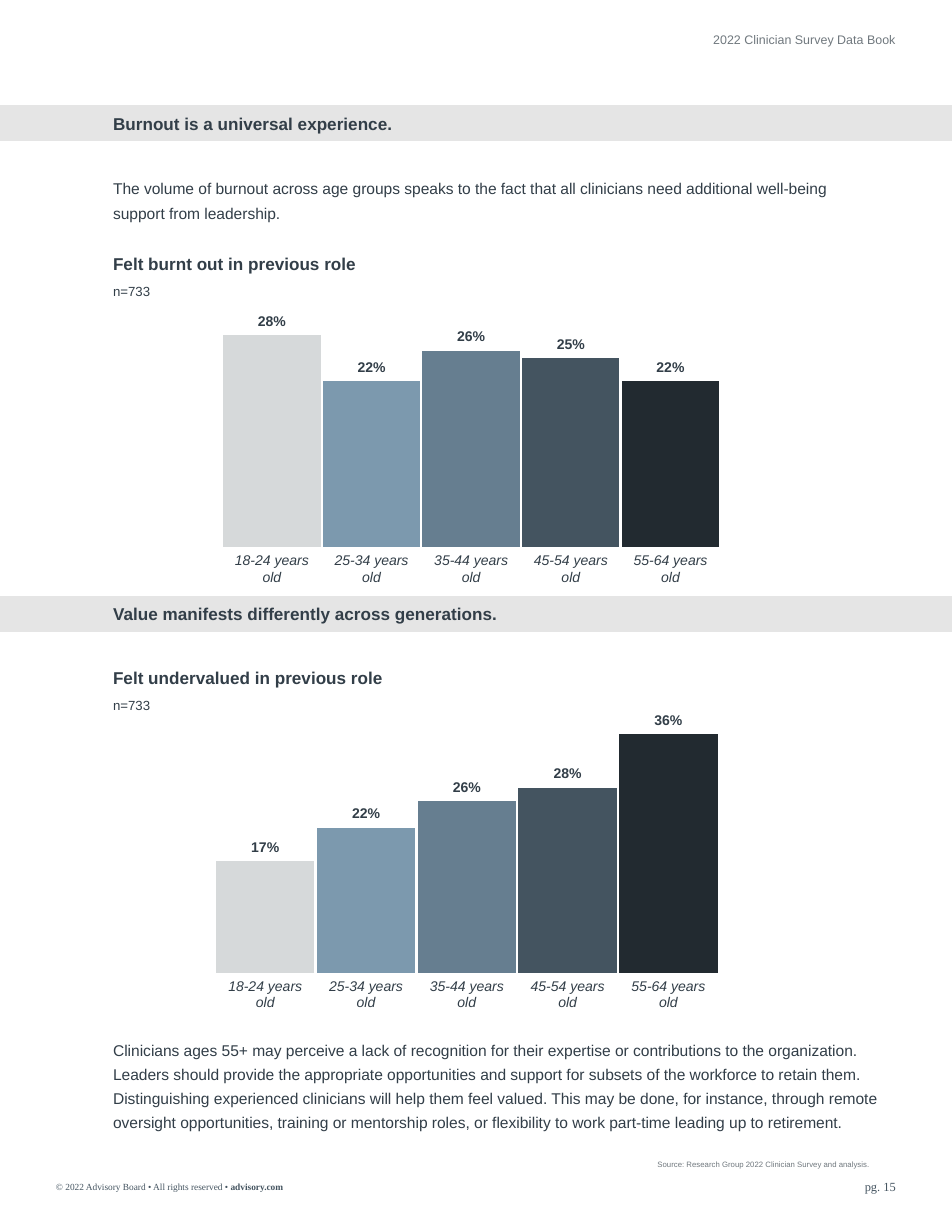
"""Build the clinician survey page on burnout and value by age group."""
import pptx
import pptx.chart.data
import pptx.dml.color
import pptx.enum.chart
import pptx.enum.shapes
import pptx.enum.text
import pptx.oxml
import pptx.oxml.ns
import pptx.util

Inches = pptx.util.Inches
ALIGN = pptx.enum.text.PP_ALIGN
ANCHOR = pptx.enum.text.MSO_ANCHOR

THEME = {
    "sans": "Arial", "serif": "Times New Roman",
    "ink": "323E48", "muted": "70787E", "footer": "445460",
    "band": "E5E5E5", "white": "FFFFFF",
    "bars": ["D6D9DA", "7C99AE", "667E90", "445460", "222A30"],
    "heading": 11, "body": 10, "label": 9, "sample": 8.5, "small": 8, "legal": 6, "source": 5,
}
MARGIN = 1.01
AGES = ["18-24 years old", "25-34 years old", "35-44 years old", "45-54 years old", "55-64 years old"]
PLOT = {"x": 0.282, "y": 0.225, "w": 0.58, "h": 0.602}

PAGE_NUMBER = "pg. 15"
COPYRIGHT = [("© 2022 Advisory Board • All rights reserved • ", False), ("advisory.com", True)]
SOURCE = "Source: Research Group 2022 Clinician Survey and analysis."
HEADER = "2022 Clinician Survey Data Book"
INTRO = ("The volume of burnout across age groups speaks to the fact that all clinicians need "
         "additional well-being\nsupport from leadership.")
CLOSING = ("Clinicians ages 55+ may perceive a lack of recognition for their expertise or contributions "
           "to the organization. Leaders should provide the appropriate opportunities and support for "
           "subsets of the workforce to retain them. Distinguishing experienced clinicians will help them "
           "feel valued. This may be done, for instance, through remote oversight opportunities, training "
           "or mentorship roles, or flexibility to work part-time leading up to retirement.")
SECTIONS = [
    {"heading": "Burnout is a universal experience.", "band": (-0.04, 0.95),
     "title": "Felt burnt out in previous role", "title_top": 2.26, "sample": "n=733",
     "chart": (-0.18, 2.08, 7.67, 3.41), "values": [0.28, 0.22, 0.26, 0.25, 0.22], "maximum": 0.3},
    {"heading": "Value manifests differently across generations.", "band": (-0.07, 5.33),
     "title": "Felt undervalued in previous role", "title_top": 5.96, "sample": "n=733",
     "chart": (-0.27, 5.41, 7.76, 3.98), "values": [0.17, 0.22, 0.26, 0.28, 0.36], "maximum": 0.4},
]


def color(name):
    return pptx.dml.color.RGBColor.from_string(THEME.get(name, name))


def style_font(font, size, ink="ink", face="sans", bold=False, italic=False):
    font.name, font.size = THEME[face], pptx.util.Pt(THEME[size])
    font.bold, font.italic = bold, italic
    font.color.rgb = color(ink)


def add_text(shapes, box, runs, size, ink="ink", face="sans", bold=False, align=ALIGN.LEFT,
             anchor=ANCHOR.TOP, wrap=True, spacing=None):
    frame = shapes.add_textbox(*map(Inches, box)).text_frame
    frame.margin_left = frame.margin_right = frame.margin_top = frame.margin_bottom = 0
    frame.word_wrap, frame.vertical_anchor = wrap, anchor
    paragraph = frame.paragraphs[0]
    paragraph.alignment, paragraph.line_spacing = align, spacing
    for text, run_bold in [(runs, bold)] if isinstance(runs, str) else runs:
        for index, line in enumerate(text.split("\n")):
            if index:
                paragraph.add_line_break()
            run = paragraph.add_run()
            run.text = line
            style_font(run.font, size, ink, face, run_bold)


def add_band(slide, section):
    left, top = section["band"]
    shape = slide.shapes.add_shape(pptx.enum.shapes.MSO_SHAPE.RECTANGLE,
                                   *map(Inches, (left, top, 8.79, 0.3)))
    shape.shadow.inherit = False
    shape.fill.solid()
    shape.fill.fore_color.rgb = shape.line.color.rgb = color("band")
    shape.line.width = pptx.util.Pt(1.5)
    add_text(slide.shapes, (MARGIN, top + 0.06, 3.46, 0.19), section["heading"], "heading",
             bold=True, wrap=False)


def add_chart_title(slide, section):
    group = slide.shapes.add_group_shape()
    top = section["title_top"]
    add_text(group.shapes, (MARGIN, top + 0.27, 0.34, 0.14), section["sample"], "sample", wrap=False)
    add_text(group.shapes, (MARGIN, top, 5.43, 0.19), section["title"], "heading", bold=True)


def place_plot(chart):
    namespace = pptx.oxml.ns.nsdecls("c", "a")
    name = pptx.oxml.ns.qn
    sizes = "".join(f'<c:{key} val="{value}"/>' for key, value in PLOT.items())
    layout = pptx.oxml.parse_xml(
        f'<c:layout {namespace}><c:manualLayout><c:layoutTarget val="inner"/>'
        f'<c:xMode val="edge"/><c:yMode val="edge"/>{sizes}</c:manualLayout></c:layout>')
    body = chart.element.find(name("c:chart"))
    area = body.find(name("c:plotArea"))
    for old in area.findall(name("c:layout")):
        area.remove(old)
    area.insert(0, layout)
    body.addnext(pptx.oxml.parse_xml(
        f"<c:spPr {namespace}><a:noFill/><a:ln><a:noFill/></a:ln></c:spPr>"))


def add_age_chart(slide, section):
    data = pptx.chart.data.CategoryChartData(number_format="0%")
    data.categories = AGES
    data.add_series("Series 1", section["values"])
    chart = slide.shapes.add_chart(pptx.enum.chart.XL_CHART_TYPE.COLUMN_CLUSTERED,
                                   *map(Inches, section["chart"]), data).chart
    place_plot(chart)
    chart.has_title = chart.has_legend = False
    style_font(chart.font, "label")
    axis = chart.category_axis
    axis.major_tick_mark = axis.minor_tick_mark = pptx.enum.chart.XL_TICK_MARK.NONE
    axis.format.line.fill.background()
    style_font(axis.tick_labels.font, "label", italic=True)
    scale = chart.value_axis
    scale.visible = scale.has_major_gridlines = False
    scale.minimum_scale, scale.maximum_scale = 0, section["maximum"]
    plot = chart.plots[0]
    plot.gap_width, plot.vary_by_categories = 0, False
    plot.has_data_labels = True
    labels = plot.data_labels
    labels.show_value = True
    labels.number_format, labels.number_format_is_linked = "0%", False
    labels.position = pptx.enum.chart.XL_LABEL_POSITION.OUTSIDE_END
    style_font(labels.font, "label", bold=True)
    for index, fill in enumerate(THEME["bars"]):
        bar = plot.series[0].points[index].format
        bar.fill.solid()
        bar.fill.fore_color.rgb = color(fill)
        bar.line.color.rgb = color("white")
        bar.line.width = pptx.util.Pt(1.5)


def main():
    presentation = pptx.Presentation()
    presentation.slide_width, presentation.slide_height = Inches(8.5), Inches(11)
    slide = presentation.slides.add_slide(presentation.slide_layouts[6])
    shapes = slide.shapes
    add_text(shapes, (7.39, 10.53, 0.61, 0.13), PAGE_NUMBER, "small", "footer", "serif", align=ALIGN.RIGHT)
    add_text(shapes, (0.5, 10.55, 2.26, 0.1), COPYRIGHT, "legal", "footer", "serif")
    add_text(shapes, (5.87, 10.36, 2.13, 0.08), SOURCE, "source", "muted", anchor=ANCHOR.BOTTOM)
    add_text(shapes, (5.2, 0.3, 2.8, 0.12), HEADER, "small", "muted", align=ALIGN.RIGHT,
             anchor=ANCHOR.MIDDLE, wrap=False, spacing=0.9)
    add_text(shapes, (MARGIN, 1.55, 7.09, 0.41), INTRO, "body", spacing=1.3)
    add_text(shapes, (MARGIN, 9.24, 6.88, 0.85), CLOSING, "body", spacing=1.3)
    for add_part in (add_band, add_chart_title, add_age_chart):
        for section in SECTIONS:
            add_part(slide, section)
    presentation.save("out.pptx")


if __name__ == "__main__":
    main()
